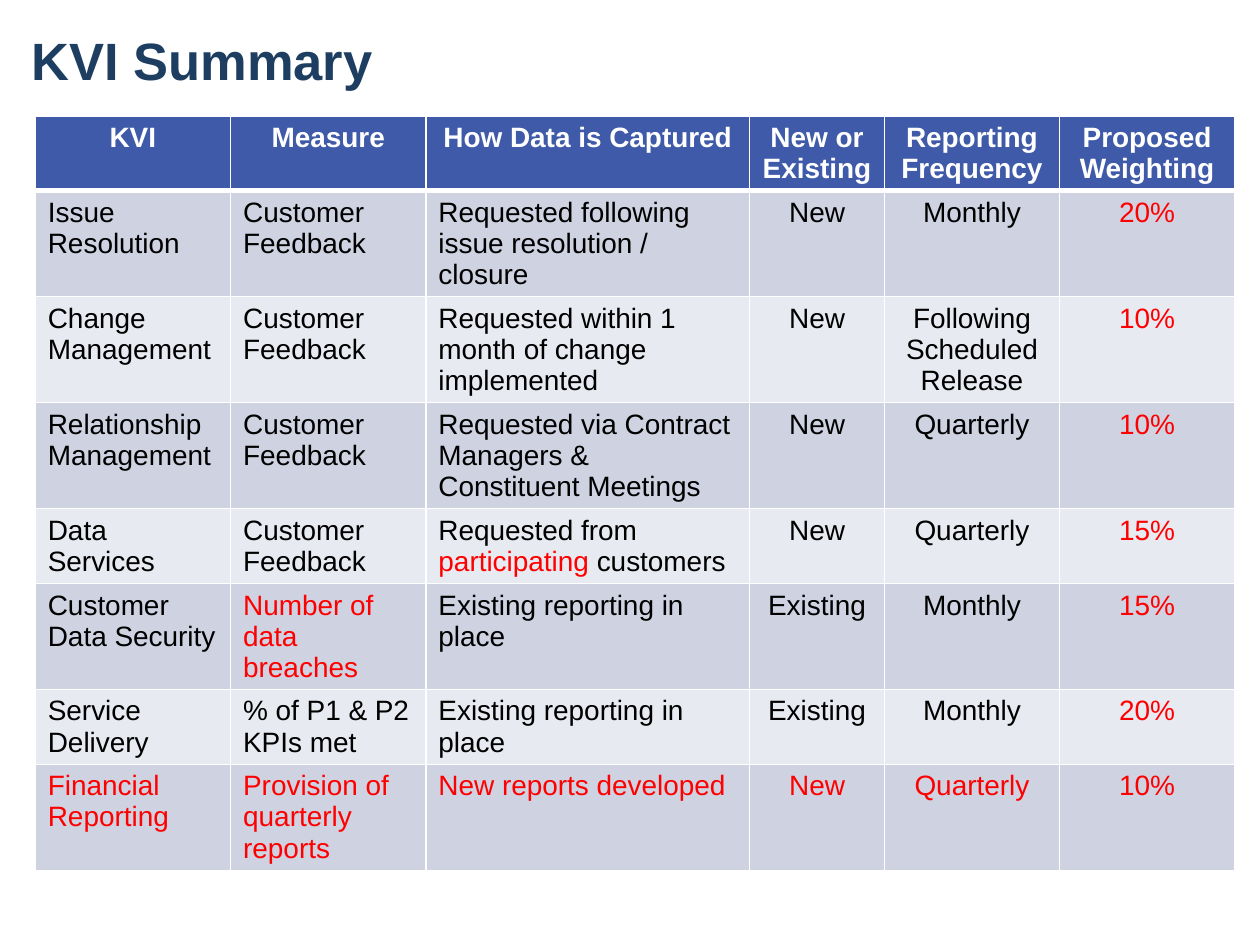
from lxml import etree
from pptx import Presentation
from pptx.dml.color import RGBColor
from pptx.enum import text
from pptx.oxml import ns
from pptx.util import Inches, Pt

COLORS = {
    "title": "1D3E61",
    "header": "3E5AA8",
    "band_dark": "CED2E1",
    "band_light": "E8EAF1",
    "white": "FFFFFF",
    "body": "000000",
    "change": "FF0000",
}
FONT = "Arial"
CHANGE_MARK = "*"
COLUMN_WIDTHS = [1.55, 1.55, 2.57, 1.07, 1.39, 1.39]
ROW_HEIGHT = 0.41
FIRST_CENTERED_COLUMN = 3
HEADINGS = ["KVI", "Measure", "How Data is Captured", "New or Existing",
            "Reporting Frequency", "Proposed Weighting"]
KVIS = [
    ["Issue Resolution", "Customer Feedback",
     "Requested following issue resolution / closure", "New", "Monthly", "*20%*"],
    ["Change Management", "Customer Feedback",
     "Requested within 1 month of change implemented", "New",
     "Following Scheduled Release", "*10%*"],
    ["Relationship Management", "Customer Feedback",
     "Requested via Contract Managers & Constituent Meetings", "New",
     "Quarterly", "*10%*"],
    ["Data Services", "Customer Feedback",
     "Requested from *participating* customers", "New", "Quarterly", "*15%*"],
    ["Customer Data Security", "*Number of data breaches*",
     "Existing reporting in place", "Existing", "Monthly", "*15%*"],
    ["Service Delivery", "% of P1 & P2 KPIs met",
     "Existing reporting in place", "Existing", "Monthly", "*20%*"],
    ["*Financial Reporting*", "*Provision of quarterly reports*",
     "*New reports developed*", "*New*", "*Quarterly*", "*10%*"],
]


def rgb(name):
    return RGBColor.from_string(COLORS[name])


def add_run(paragraph, words, size, color, bold):
    run = paragraph.add_run()
    run.text = words
    run.font.name = FONT
    run.font.size = Pt(size)
    run.font.bold = bold
    run.font.color.rgb = rgb(color)


def add_title(slide, words):
    title = slide.shapes.title
    title.left, title.top = Inches(0.25), Inches(-0.06)
    title.width, title.height = Inches(9.5), Inches(1.06)
    frame = title.text_frame
    frame.margin_left = frame.margin_right = 0
    frame.margin_top = frame.margin_bottom = 0
    frame.vertical_anchor = text.MSO_ANCHOR.MIDDLE
    frame.paragraphs[0].alignment = text.PP_ALIGN.LEFT
    add_run(frame.paragraphs[0], words, 30, "title", True)


def add_borders(cell, bottom_width, top_width):
    properties = cell._tc.get_or_add_tcPr()
    for side, width in (("L", 1), ("R", 1), ("T", top_width), ("B", bottom_width)):
        line = etree.SubElement(properties, ns.qn(f"a:ln{side}"), w=str(Pt(width)))
        fill = etree.SubElement(line, ns.qn("a:solidFill"))
        etree.SubElement(fill, ns.qn("a:srgbClr"), val=COLORS["white"])


def fill_cell(cell, words, row, column):
    is_header = row == 0
    add_borders(cell, 3 if is_header else 1, 3 if row == 1 else 1)
    band = "header" if is_header else "band_dark" if row % 2 else "band_light"
    cell.fill.solid()
    cell.fill.fore_color.rgb = rgb(band)
    paragraph = cell.text_frame.paragraphs[0]
    if is_header or column >= FIRST_CENTERED_COLUMN:
        paragraph.alignment = text.PP_ALIGN.CENTER
    base_color = "white" if is_header else "body"
    for index, part in enumerate(words.split(CHANGE_MARK)):
        if part:
            add_run(paragraph, part, 16, "change" if index % 2 else base_color, is_header)


def add_kvi_table(slide):
    rows = [HEADINGS] + KVIS
    table = slide.shapes.add_table(
        len(rows), len(HEADINGS), Inches(0.28), Inches(0.92),
        Inches(sum(COLUMN_WIDTHS)), Inches(ROW_HEIGHT * len(rows))).table
    for column, width in zip(table.columns, COLUMN_WIDTHS):
        column.width = Inches(width)
    for row, entries in enumerate(rows):
        for column, words in enumerate(entries):
            fill_cell(table.cell(row, column), words, row, column)


def main():
    deck = Presentation()
    deck.slide_width, deck.slide_height = Inches(10), Inches(7.5)
    slide = deck.slides.add_slide(deck.slide_layouts[5])
    add_title(slide, "KVI Summary")
    add_kvi_table(slide)
    deck.save("out.pptx")


if __name__ == "__main__":
    main()
